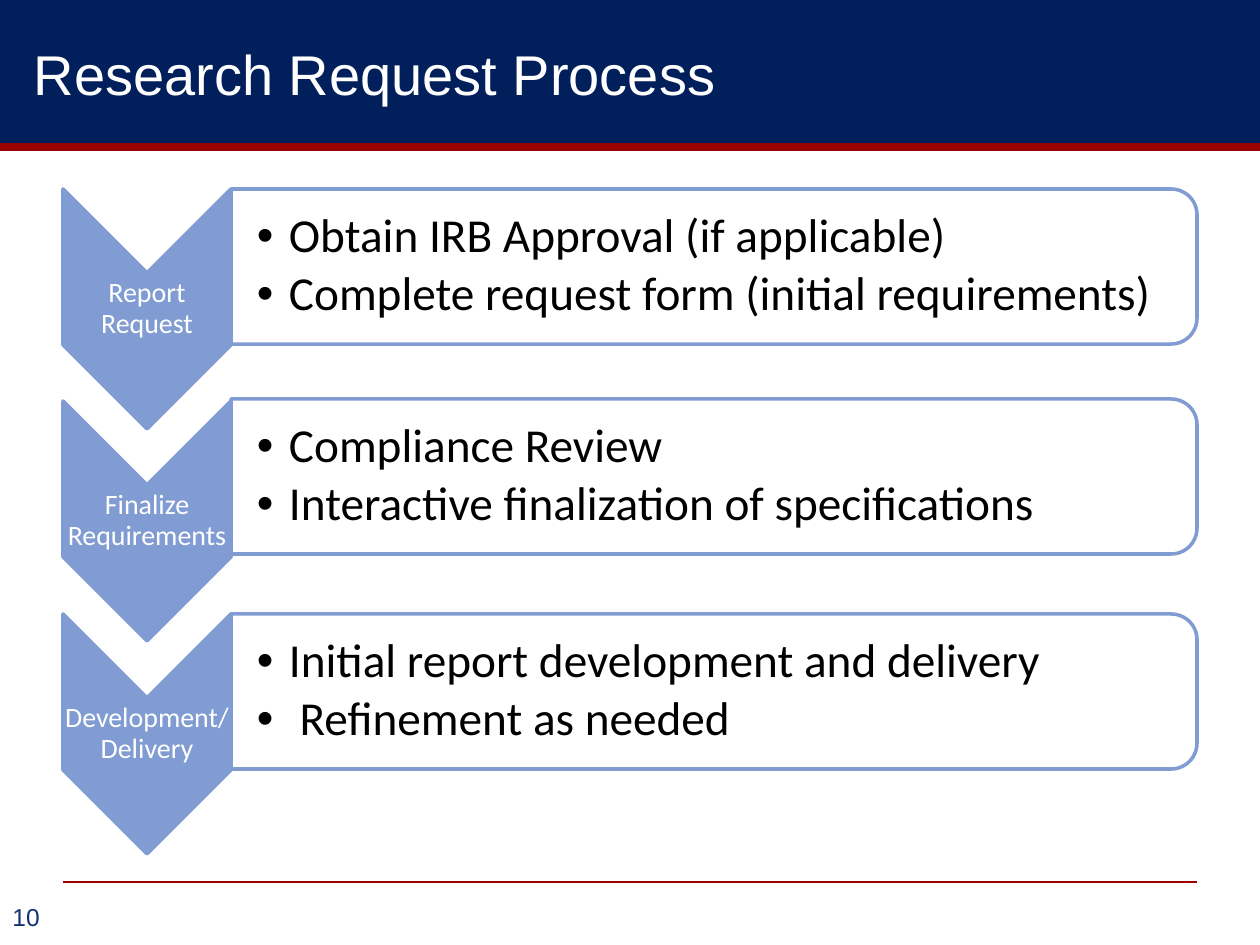
import pptx
import pptx.util
import pptx.dml.color
import pptx.enum.shapes
import pptx.enum.text
import pptx.oxml
import pptx.oxml.ns
import lxml.etree

PX = 914400 / 126
SHAPE = pptx.enum.shapes.MSO_SHAPE
ALIGN = pptx.enum.text.PP_ALIGN
MIDDLE = pptx.enum.text.MSO_ANCHOR.MIDDLE
NAVY, RED, BLUE, WHITE = "011F5B", "990000", "819CD2", "FFFFFF"

STEPS = [
    (189, 189, "Report Request",
     ["Obtain IRB Approval (if applicable)", "Complete request form (initial requirements)"]),
    (401, 399, "Finalize Requirements",
     ["Compliance Review", "Interactive finalization of specifications"]),
    (614, 614, "Development/ Delivery",
     ["Initial report development and delivery", " Refinement as needed"]),
]


def px(value):
    return pptx.util.Emu(round(value * PX))


def color(code):
    return pptx.dml.color.RGBColor.from_string(code)


def set_format(target, values):
    for name, value in values.items():
        setattr(target, name, value)


def add_sub(parent, tag, **attributes):
    element = lxml.etree.SubElement(parent, pptx.oxml.ns.qn(tag))
    for name, value in attributes.items():
        element.set(name, value)
    return element


def place(shape, left, top, width, height):
    set_format(shape, {"left": px(left), "top": px(top), "width": px(width), "height": px(height)})


def write(shape, lines, size, code, font="Calibri", frame={}, para_format={}, bullet=False):
    box = shape.text_frame
    set_format(box, {"word_wrap": True, "vertical_anchor": MIDDLE, **frame})
    for index, line in enumerate(lines):
        para = box.paragraphs[0] if index == 0 else box.add_paragraph()
        set_format(para, para_format)
        if bullet:
            properties = para._p.get_or_add_pPr()
            properties.set("marL", str(px(32)))
            properties.set("indent", str(px(-32)))
            add_sub(properties, "a:buFont", typeface="Arial")
            add_sub(properties, "a:buChar", char="•")
        span = para.add_run()
        span.text = line
        set_format(span.font, {"size": pptx.util.Pt(size), "name": font, "bold": False})
        span.font.color.rgb = color(code)


def add_block(page, kind, left, top, width, height, fill, line=None):
    shape = page.shapes.add_shape(kind, px(left), px(top), px(width), px(height))
    shape.shadow.inherit = False
    shape.fill.solid()
    shape.fill.fore_color.rgb = color(fill)
    if line:
        shape.line.color.rgb = color(line)
        shape.line.width = pptx.util.Pt(2)
    else:
        shape.line.fill.background()
    return shape


def add_turned_block(page, kind, left, top, width, height, fill):
    shift = (width - height) / 2
    shape = add_block(page, kind, left + shift, top - shift, height, width, fill, BLUE)
    shape.rotation = 90
    return shape


def add_rule(page, left, right, top, weight):
    rule = page.shapes.add_connector(
        pptx.enum.shapes.MSO_CONNECTOR.STRAIGHT, px(left), px(top), px(right), px(top))
    rule.line.color.rgb = color(RED)
    rule.line.width = pptx.util.Pt(weight)
    add_sub(rule.element.spPr, "a:effectLst")


def add_text(page, left, top, width, height, *args, **options):
    shape = page.shapes.add_textbox(px(left), px(top), px(width), px(height))
    write(shape, *args, **options)


def add_header(page, left, top, width, height):
    add_block(page, SHAPE.RECTANGLE, left, top, width, height, NAVY)
    add_rule(page, left, left + width, top + height, 4.5)
    title = page.shapes.title
    place(title, left + 21, top, width - 21, height)
    write(title, ["Research Request Process"], 32, WHITE, "Arial",
          para_format={"alignment": ALIGN.LEFT})
    title.element.getparent().append(title.element)


def add_step_label(page, left, top, width, height, label):
    add_turned_block(page, SHAPE.CHEVRON, left, top, width, height, BLUE)
    margins = {"margin_" + side: px(1) for side in ("left", "top", "right", "bottom")}
    add_text(page, left, top + width / 2, width, height - width, [label], 16, WHITE,
             frame=margins,
             para_format={"alignment": ALIGN.CENTER, "line_spacing": 0.9,
                          "space_after": pptx.util.Pt(5.6)})


def add_step_panel(page, left, top, width, height, lines):
    panel = add_turned_block(page, SHAPE.ROUND_2_SAME_RECTANGLE, left, top, width, height, WHITE)
    fill = panel.element.spPr.find(".//" + pptx.oxml.ns.qn("a:srgbClr"))
    add_sub(fill, "a:alpha", val="90000")
    add_text(page, left, top + 8, width - 8, height - 16, lines, 27, "000000",
             frame={"margin_left": px(26), "margin_top": px(2),
                    "margin_right": px(2), "margin_bottom": px(2)},
             para_format={"line_spacing": 0.9, "space_after": pptx.util.Pt(4)}, bullet=True)


def add_footer(page, left, top, width):
    add_rule(page, left + 63, left + width - 63, top, 1.5)
    add_text(page, left, top + 14, 55, 43, ["10"], 14, "143171", "Arial",
             frame={"word_wrap": False, "vertical_anchor": pptx.enum.text.MSO_ANCHOR.TOP})


def main():
    deck = pptx.Presentation()
    set_format(deck, {"slide_width": px(1260), "slide_height": px(945)})
    page = deck.slides.add_slide(deck.slide_layouts[5])
    add_header(page, 0, 0, 1260, 147)
    for label_top, panel_top, label, lines in STEPS:
        add_step_label(page, 63, label_top, 168, 240, label)
        add_step_panel(page, 231, panel_top, 966, 155, lines)
    add_footer(page, 0, 882, 1260)
    deck.save("out.pptx")


if __name__ == "__main__":
    main()
